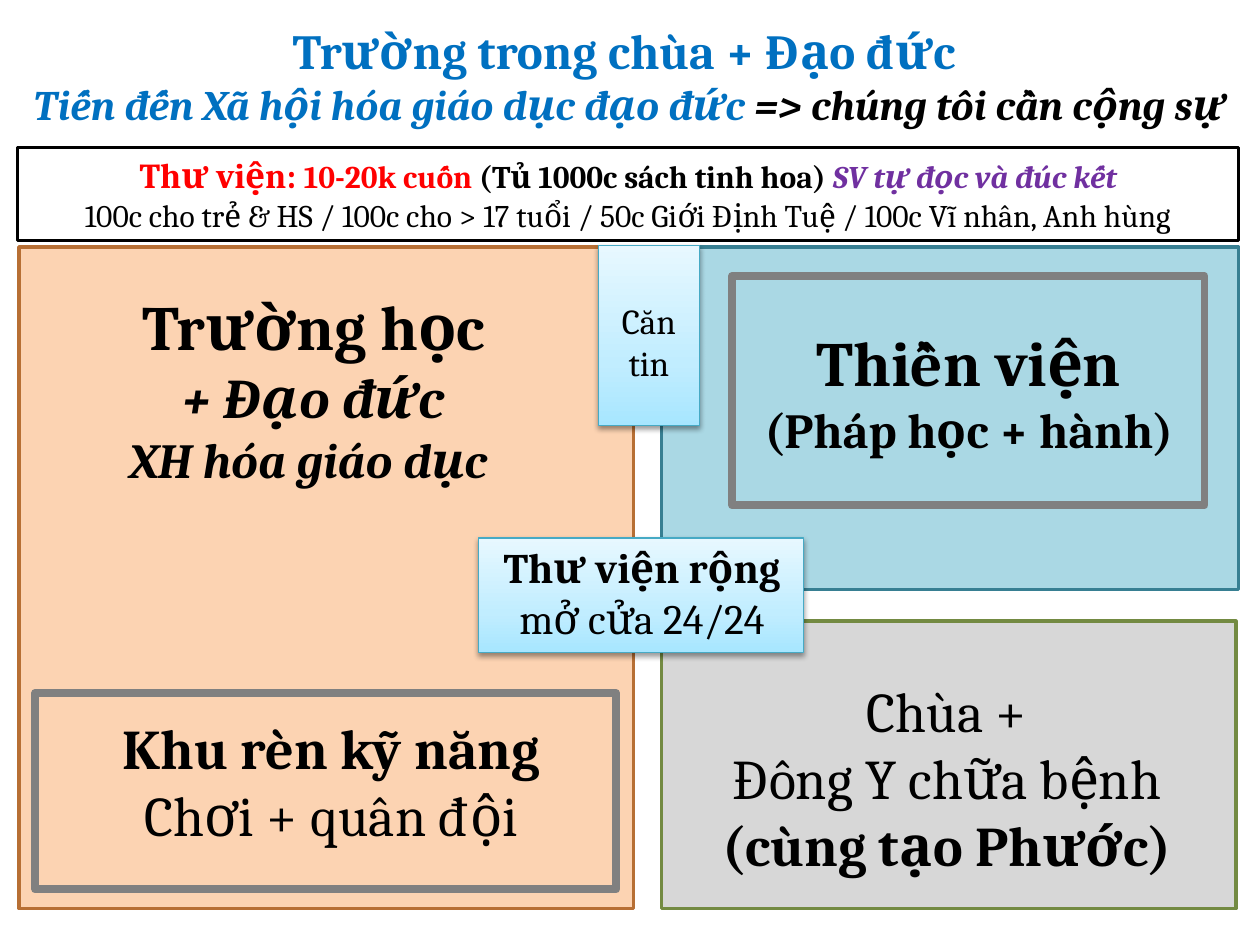
from copy import deepcopy

from lxml import etree
from pptx import Presentation
from pptx.dml.color import RGBColor
from pptx.enum.shapes import MSO_SHAPE
from pptx.enum.text import MSO_ANCHOR, PP_ALIGN
from pptx.oxml.ns import qn
from pptx.util import Inches, Pt

RECTANGLE = MSO_SHAPE.RECTANGLE
CENTER = PP_ALIGN.CENTER
TOP = MSO_ANCHOR.TOP
FONT = "Cambria"
BLACK, GRAY, BLUE = "000000", "808080", "0070C0"
SKY_STOPS = ((0, "A7E6FF"), (0.35, "C1EDFF"), (1, "E7F8FF"))


def rgb(value):
    return RGBColor.from_string(value)


def style(font, size=None, color=None, bold=None, italic=None):
    if size:
        font.size = Pt(size)
    if color:
        font.color.rgb = rgb(color)
    if bold is not None:
        font.bold = bold
    if italic is not None:
        font.italic = italic


def write(frame, *paragraphs):
    """Each paragraph is (shared style, run, ...); a run is (text, own style)."""
    frame.word_wrap = True
    frame.vertical_anchor = TOP
    for index, (shared, *runs) in enumerate(paragraphs):
        paragraph = frame.paragraphs[0] if index == 0 else frame.add_paragraph()
        paragraph.alignment = CENTER
        paragraph.font.name = FONT
        style(paragraph.font, **{"color": BLACK, **shared})
        for text, own in runs:
            run = paragraph.add_run()
            run.text = text.rstrip("\n")
            style(run.font, **own)
            if text.endswith("\n"):
                paragraph.add_line_break()
                line_break = paragraph._p.findall(qn("a:br"))[-1]
                line_break.append(deepcopy(run.font._element))


def add_label(shapes, box, *paragraphs):
    label = shapes.add_textbox(*map(Inches, box))
    write(label.text_frame, *paragraphs)
    return label


def add_panel(shapes, box, line, width, fill=None):
    panel = shapes.add_shape(RECTANGLE, *map(Inches, box))
    panel.shadow.inherit = False
    if fill:
        panel.fill.solid()
        panel.fill.fore_color.rgb = rgb(fill)
    else:
        panel.fill.background()
    panel.line.color.rgb = rgb(line)
    panel.line.width = Pt(width)
    return panel


def add_sky_panel(shapes, box):
    """Panel with a three-step gradient, light at the top, and a soft shadow."""
    panel = add_panel(shapes, box, "46AAC5", 0.75)
    panel.fill.gradient()
    panel.fill.gradient_angle = 90
    properties = panel._element.spPr
    stop_list = properties.find(qn("a:gradFill")).find(qn("a:gsLst"))
    stop_list.insert(1, deepcopy(stop_list[0]))
    for stop, (position, color) in zip(panel.fill.gradient_stops, SKY_STOPS):
        stop.position = position
        stop.color.rgb = rgb(color)
    shadow = etree.SubElement(
        properties.find(qn("a:effectLst")), qn("a:outerShdw"),
        blurRad=str(Pt(3.1)), dist=str(Pt(1.6)), dir="5400000", rotWithShape="0")
    shade = etree.SubElement(shadow, qn("a:srgbClr"), val=BLACK)
    etree.SubElement(shade, qn("a:alpha"), val="38000")


def add_title(slide, box):
    title = slide.shapes.title
    title.left, title.top, title.width, title.height = map(Inches, box)
    write(title.text_frame,
          ({"size": 28, "color": BLUE, "bold": True},
           ("Trường trong chùa + Đạo đức \n", {"size": 28}),
           ("Tiến đến Xã hội hóa giáo dục đạo đức ", {"size": 24, "italic": True}),
           ("=> chúng tôi cần cộng sự",
            {"size": 24, "italic": True, "color": BLACK})))


def add_book_list(shapes, box):
    book_list = add_label(
        shapes, box,
        ({"size": 18, "bold": True},
         ("Thư viện: ", {"size": 20, "color": "FF0000"}),
         ("10-20k cuốn ", {"color": "FF0000"}),
         ("(Tủ 1000c sách tinh hoa) ", {}),
         ("SV tự đọc và đúc kết", {"color": "7030A0", "italic": True})),
        ({"size": 18},
         ("100c cho trẻ & HS / 100c cho > 17 tuổi / 50c Giới Định Tuệ / "
          "100c Vĩ nhân, Anh hùng", {})))
    book_list.line.color.rgb = rgb(BLACK)
    book_list.line.width = Pt(1.5)


def add_school(shapes, box):
    left, top, width, height = box
    add_panel(shapes, box, "B76F34", 2, "FCD3B2")
    add_label(shapes, (left + 0.13, top + 0.27, width - 0.46, 1.72),
              ({"size": 36, "bold": True}, ("Trường học", {})),
              ({"bold": True, "italic": True},
               ("+ Đạo đức\n", {"size": 32}),
               ("XH hóa giáo dục ", {"size": 28})))
    # Skills area at the foot of the school
    area_top = top + height - 1.71
    add_label(shapes, (left + 0.22, area_top + 0.11, width - 0.36, 1.18),
              ({"size": 32, "bold": True}, ("Khu rèn kỹ năng", {})),
              ({"size": 32}, ("Chơi + quân đội", {})))
    add_panel(shapes, (left + 0.13, area_top, width - 0.27, 1.56), GRAY, 4.5)


def add_meditation(shapes, box):
    left, top, width, height = box
    add_panel(shapes, box, "377F92", 2, "AAD8E4")
    hall = shapes.add_group_shape().shapes
    add_label(hall, (left + 0.36, top + 0.56, width - 0.42, 1.18),
              ({"size": 36, "bold": True}, ("Thiền viện", {})),
              ({"size": 28, "bold": True}, ("(Pháp học + hành)", {})))
    add_panel(hall, (left + 0.56, top + 0.23, width - 0.83, height - 0.9),
              GRAY, 4.5)


def add_temple(shapes, box):
    left, top, width, height = box
    add_panel(shapes, box, "738A42", 2, "D7D7D7")
    add_label(shapes, (left + 0.16, top + 0.39, width - 0.35, height - 0.56),
              ({"size": 32}, ("Chùa +", {})),
              ({"size": 32}, ("Đông Y chữa bệnh", {})),
              ({"size": 32, "bold": True}, ("(cùng tạo Phước)", {})))


def add_library(shapes, box):
    left, top, width, height = box
    add_sky_panel(shapes, box)
    add_label(shapes, (left - 0.21, top - 0.02, width + 0.43, height),
              ({"size": 24, "bold": True}, ("Thư viện rộng", {})),
              ({"size": 24}, ("mở cửa 24/24", {})))


def add_canteen(shapes, box):
    left, top, width, height = box
    add_sky_panel(shapes, box)
    add_label(shapes, (left - 0.09, top + 0.38, width + 0.18, height - 0.66),
              ({"size": 20}, ("Căn", {})),
              ({"size": 20}, ("tin", {})))


def main():
    deck = Presentation()
    deck.slide_width, deck.slide_height = Inches(10), Inches(7.5)
    slide = deck.slides.add_slide(deck.slide_layouts[5])
    shapes = slide.shapes
    # Heading
    add_title(slide, (0.14, 0.11, 9.71, 0.98))
    add_book_list(shapes, (0.14, 1.17, 9.69, 0.74))
    # Grounds
    add_school(shapes, (0.15, 1.96, 4.88, 5.25))
    add_meditation(shapes, (5.25, 1.96, 4.58, 2.72))
    add_temple(shapes, (5.25, 4.93, 4.56, 2.28))
    # Shared rooms between the grounds
    add_library(shapes, (3.8, 4.27, 2.58, 0.91))
    add_canteen(shapes, (4.75, 1.95, 0.8, 1.43))
    deck.save("out.pptx")


if __name__ == "__main__":
    main()
